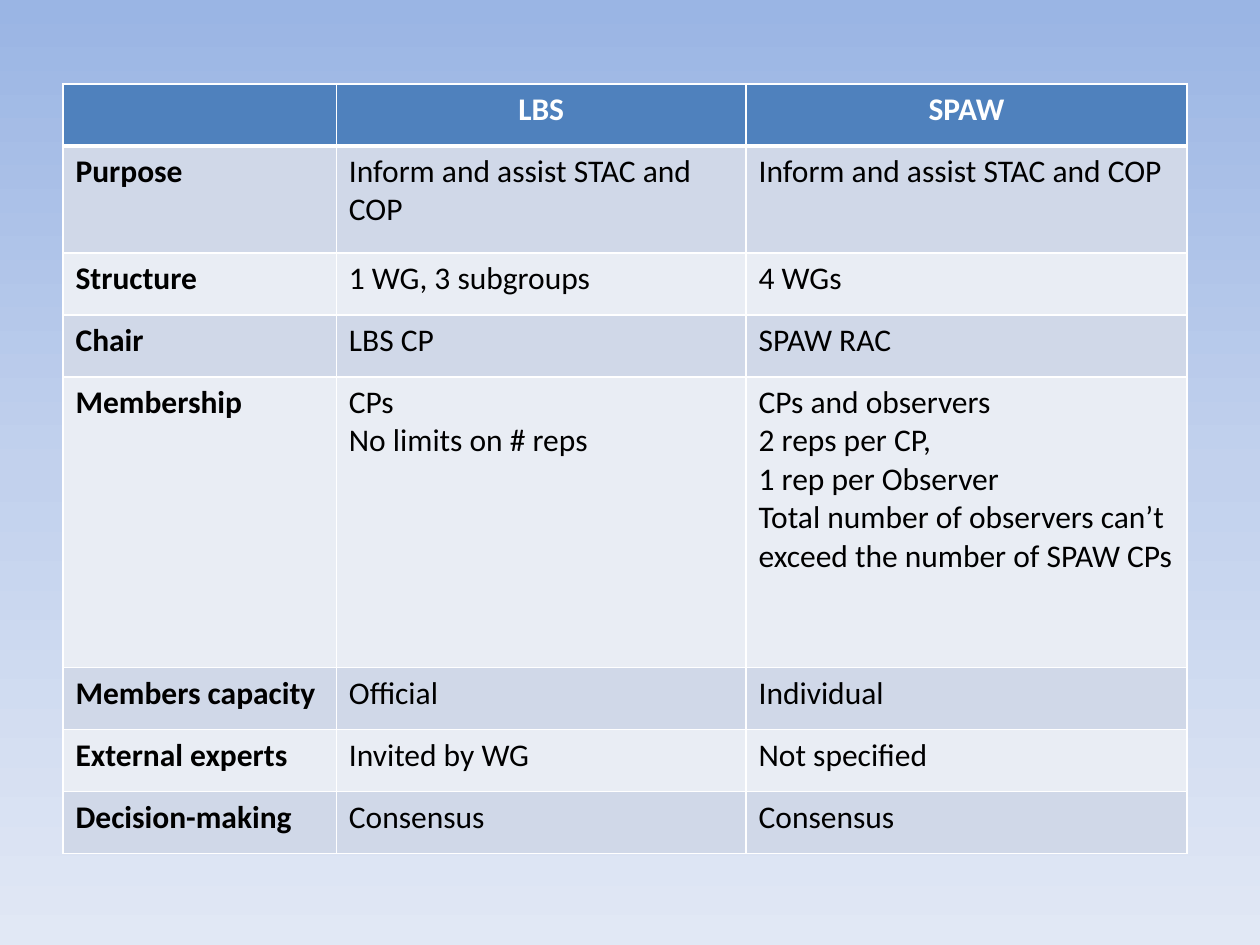
"""Build a slide comparing the LBS and SPAW working groups in a table."""
import copy

import lxml.etree
import pptx
import pptx.dml.color
import pptx.enum.text
import pptx.oxml.ns
import pptx.util

RGBColor = pptx.dml.color.RGBColor
Cm = pptx.util.Cm
WHITE = RGBColor(0xFF, 0xFF, 0xFF)
BLACK = RGBColor(0x00, 0x00, 0x00)
HEADER_BLUE = RGBColor(0x4F, 0x81, 0xBD)
BAND_COLORS = [RGBColor(0xE9, 0xED, 0xF4), RGBColor(0xD0, 0xD8, 0xE8)]
BACKGROUND_STOPS = [
    (0, RGBColor(0x9A, 0xB5, 0xE4)),
    (0.5, RGBColor(0xC2, 0xD1, 0xED)),
    (1, RGBColor(0xE1, 0xE8, 0xF5)),
]

COLUMN_WIDTHS = [5.51, 8.26, 8.89]
ROW_HEIGHT = 1.25
TALL_ROWS = {1: 2.16, 4: 5.86}
ROWS = [
    ["", "LBS", "SPAW"],
    ["Purpose", "Inform and assist STAC and COP", "Inform and assist STAC and COP"],
    ["Structure", "1 WG, 3 subgroups", "4 WGs"],
    ["Chair", "LBS CP", "SPAW RAC"],
    [
        "Membership",
        "CPs\nNo limits on # reps",
        "CPs and observers\n2 reps per CP,\n1 rep per Observer\n"
        "Total number of observers can’t exceed the number of SPAW CPs",
    ],
    ["Members capacity", "Official", "Individual"],
    ["External experts", "Invited by WG", "Not specified"],
    ["Decision-making", "Consensus", "Consensus"],
]


def add_border(cell, side, points):
    properties = cell._tc.get_or_add_tcPr()
    line = lxml.etree.SubElement(properties, pptx.oxml.ns.qn(f"a:{side}"))
    line.set("w", str(pptx.util.Pt(points)))
    fill = lxml.etree.SubElement(line, pptx.oxml.ns.qn("a:solidFill"))
    lxml.etree.SubElement(fill, pptx.oxml.ns.qn("a:srgbClr")).set("val", str(WHITE))


presentation = pptx.Presentation()
presentation.slide_width = Cm(25.4)
presentation.slide_height = Cm(19.05)
slide = presentation.slides.add_slide(presentation.slide_layouts[6])

background = slide.background.fill
background.gradient()
background.gradient_angle = 270
stop_list = slide.element.xpath(".//p:bg//a:gsLst")[0]
stop_list.append(copy.deepcopy(stop_list[-1]))
for stop, (position, color) in zip(background.gradient_stops, BACKGROUND_STOPS):
    stop.position = position
    stop.color.rgb = color

heights = [TALL_ROWS.get(index, ROW_HEIGHT) for index in range(len(ROWS))]
table = slide.shapes.add_table(
    len(ROWS), len(COLUMN_WIDTHS), Cm(1.27), Cm(1.69),
    Cm(sum(COLUMN_WIDTHS)), Cm(sum(heights)),
).table
for column, width in zip(table.columns, COLUMN_WIDTHS):
    column.width = Cm(width)
for row, height in zip(table.rows, heights):
    row.height = Cm(height)

for row_index, texts in enumerate(ROWS):
    is_header = row_index == 0
    for column_index, text in enumerate(texts):
        cell = table.cell(row_index, column_index)
        borders = {
            "lnL": 1,
            "lnR": 1,
            "lnT": 3 if row_index == 1 else 1,
            "lnB": 3 if is_header else 1,
        }
        for side, points in borders.items():
            add_border(cell, side, points)
        cell.fill.solid()
        cell.fill.fore_color.rgb = HEADER_BLUE if is_header else BAND_COLORS[row_index % 2]
        cell.text = text
        font_format = {
            "name": "Calibri",
            "size": pptx.util.Pt(18),
            "bold": is_header or column_index == 0,
        }
        for paragraph in cell.text_frame.paragraphs:
            if is_header:
                paragraph.alignment = pptx.enum.text.PP_ALIGN.CENTER
            for run in paragraph.runs:
                for name, value in font_format.items():
                    setattr(run.font, name, value)
                run.font.color.rgb = WHITE if is_header else BLACK

presentation.save("out.pptx")
